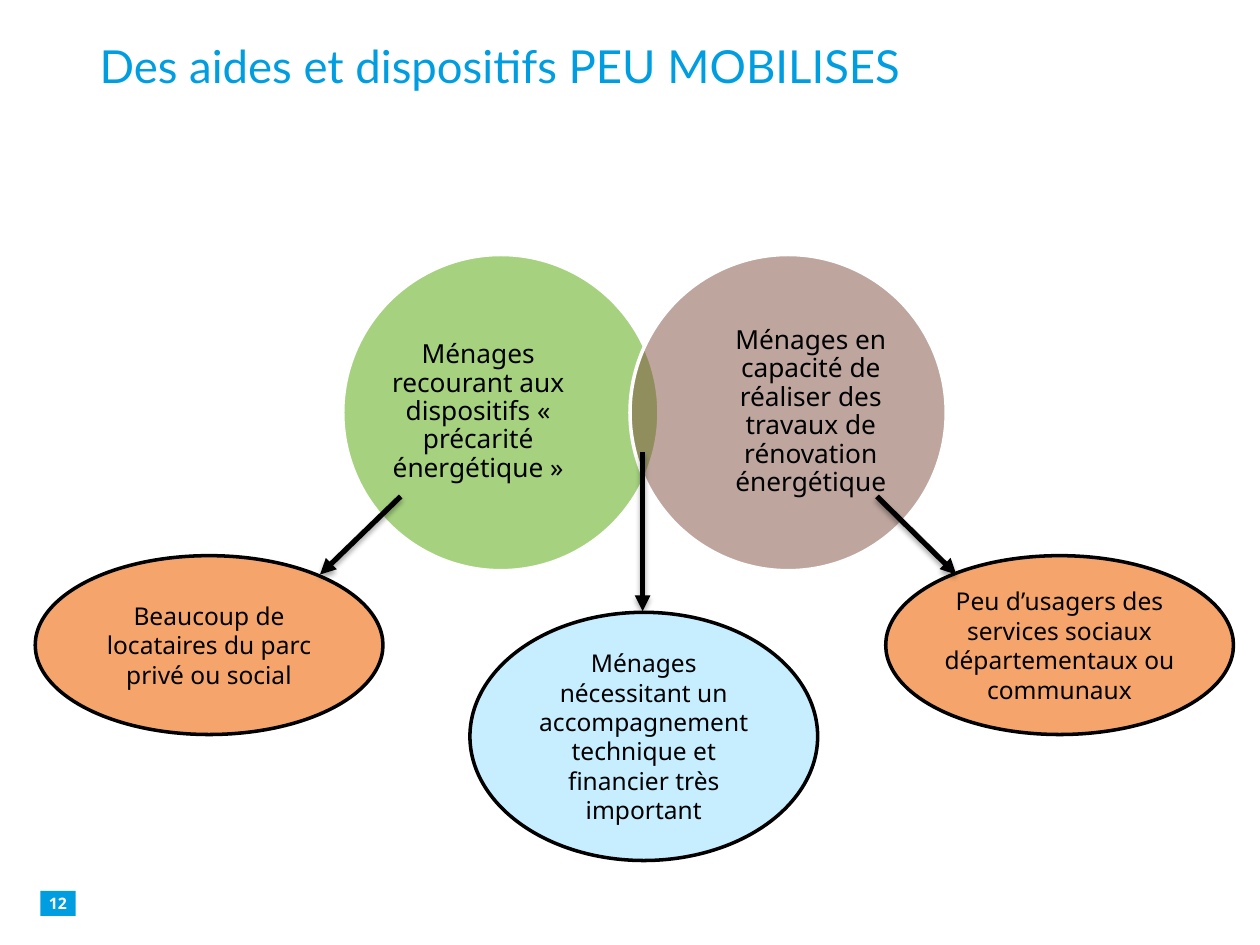
from pptx import Presentation
from pptx.dml.color import RGBColor
from pptx.enum.shapes import MSO_CONNECTOR as Connector, MSO_SHAPE as Shape
from pptx.enum.text import MSO_ANCHOR as Anchor, PP_ALIGN as Align
from pptx.oxml import parse_xml
from pptx.oxml.ns import nsdecls
from pptx.util import Inches, Pt

COLORS = {
    "blue": "009EE1", "green": "4FA600", "brown": "7E4C3E", "orange": "F5A56C",
    "pale": "C6EEFF", "black": "000000", "white": "FFFFFF",
}


def rgb(name):
    return RGBColor.from_string(COLORS[name])


def write_text(shape, text, size=14, font="Noto Sans", color="black", bold=False,
               align=Align.CENTER, anchor=Anchor.MIDDLE, insets=(0, 0),
               spacing=None, after=None, wrap=True):
    frame = shape.text_frame
    frame.word_wrap = wrap
    frame.vertical_anchor = anchor
    frame.margin_left = frame.margin_right = Inches(insets[0])
    frame.margin_top = frame.margin_bottom = Inches(insets[1])
    paragraph = frame.paragraphs[0]
    paragraph.alignment = align
    paragraph.line_spacing = spacing
    paragraph.space_after = after
    run = paragraph.add_run()
    run.text = text
    run.font.size = Pt(size)
    run.font.name = font
    run.font.bold = bold
    run.font.color.rgb = rgb(color)


class SlideBuilder:
    """Draws styled elements on the current slide."""

    line_width = Pt(2)
    arrow_width = Pt(3)

    def __init__(self, slide):
        self.slide = slide

    def shape(self, kind, box, fill, line=None, alpha=None):
        shape = self.slide.shapes.add_shape(kind, *map(Inches, box))
        shape.shadow.inherit = False
        shape.fill.solid()
        shape.fill.fore_color.rgb = rgb(fill)
        if alpha:
            color = shape._element.spPr.find(".//{*}solidFill/{*}srgbClr")
            color.append(parse_xml(f'<a:alpha {nsdecls("a")} val="{alpha * 1000}"/>'))
        if line:
            shape.line.color.rgb = rgb(line)
            shape.line.width = self.line_width
        else:
            shape.line.fill.background()
        return shape

    def text(self, box, text, **style):
        write_text(self.slide.shapes.add_textbox(*map(Inches, box)), text, **style)

    def circle(self, left, text_left, fill, text):
        self.shape(Shape.OVAL, (left, 2.02, 2.51, 2.51), fill, "white", alpha=50)
        self.text((text_left, 2.31, 1.45, 1.92), text, size=15, spacing=0.9, after=Pt(5))

    def bubble(self, left, top, height, fill, text):
        shape = self.shape(Shape.OVAL, (left, top, 2.76, height), fill, "black")
        write_text(shape, text, insets=(0.04, 0.04))

    def arrow(self, start, end):
        connector = self.slide.shapes.add_connector(
            Connector.STRAIGHT, *map(Inches, start + end))
        connector.line.color.rgb = rgb("black")
        connector.line.width = self.arrow_width
        connector.line._get_or_add_ln().append(
            parse_xml(f'<a:tailEnd {nsdecls("a")} type="triangle"/>'))
        connector._element.spPr.append(parse_xml(
            f'<a:effectLst {nsdecls("a")}>'
            f'<a:outerShdw blurRad="{Pt(3.1)}" dist="{Pt(1.8)}" dir="5400000" rotWithShape="0">'
            f'<a:srgbClr val="{COLORS["black"]}"><a:alpha val="35000"/></a:srgbClr>'
            '</a:outerShdw></a:effectLst>'))


def main():
    presentation = Presentation()
    presentation.slide_width = Inches(10)
    presentation.slide_height = Inches(7.5)
    builder = SlideBuilder(presentation.slides.add_slide(presentation.slide_layouts[6]))

    number = builder.shape(Shape.RECTANGLE, (0.32, 7.07, 0.28, 0.2), "blue")
    write_text(number, "12", size=9, color="white", bold=True, wrap=False)
    builder.text((0.75, 0.3, 8.82, 1.25), "Des aides et dispositifs PEU MOBILISES",
                 size=26, font="Lato", color="blue", align=Align.LEFT,
                 anchor=Anchor.TOP, insets=(0.04, 0))

    builder.circle(2.72, 3.07, "green",
                   "Ménages recourant aux dispositifs « précarité énergétique »")
    builder.circle(5, 5.71, "brown",
                   "Ménages en capacité de réaliser des travaux de rénovation énergétique")

    builder.arrow((5.1, 3.59), (5.1, 4.85))
    builder.bubble(7.03, 4.41, 1.42, "orange",
                   "Peu d’usagers des services sociaux départementaux ou communaux")
    builder.arrow((6.96, 3.94), (7.59, 4.56))
    builder.bubble(3.73, 4.86, 1.97, "pale",
                   "Ménages nécessitant un accompagnement technique et financier très important")
    builder.bubble(0.28, 4.41, 1.42, "orange",
                   "Beaucoup de locataires du parc privé ou social")
    builder.arrow((3.18, 3.94), (2.54, 4.56))

    presentation.save("out.pptx")


if __name__ == "__main__":
    main()
